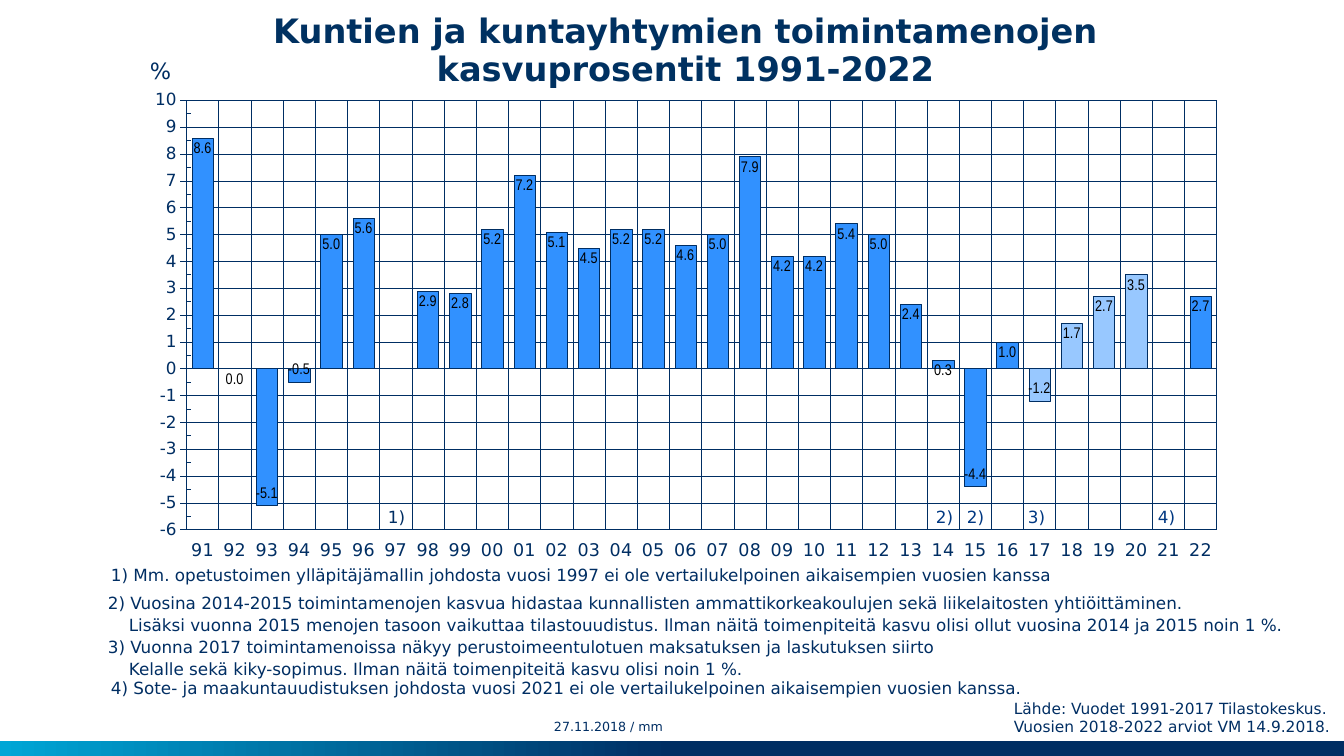
import pptx
import pptx.chart.data
import pptx.dml.color
import pptx.enum.chart
import pptx.enum.dml
import pptx.enum.shapes
import pptx.enum.text
import pptx.oxml
import pptx.oxml.ns
import pptx.util

RGB = pptx.dml.color.RGBColor
NAVY = RGB(0x00, 0x2E, 0x63)
TITLE_NAVY = RGB(0x00, 0x31, 0x61)
MARK_BLUE = RGB(0x00, 0x38, 0x82)
CYAN = RGB(0x00, 0xA6, 0xD6)
BAR_BLUE = RGB(0x31, 0x91, 0xFF)
ESTIMATE_BLUE = RGB(0x98, 0xC8, 0xFF)
BLACK = RGB(0, 0, 0)

FONT = "DejaVu Sans"
WIDTH, HEIGHT = 1344, 756
EMU_PER_PX = 914400 / 100.8
ANCHOR = pptx.enum.text.MSO_ANCHOR
TICK = pptx.enum.chart.XL_TICK_MARK

YEARS = [f"{year % 100:02d}" for year in range(1991, 2023)]
GROWTH = [8.6, 0, -5.1, -0.5, 5, 5.6, None, 2.9, 2.8, 5.2, 7.2, 5.1, 4.5, 5.2, 5.2, 4.6,
          5, 7.9, 4.2, 4.2, 5.4, 5, 2.4, 0.3, -4.4, 1, -1.2, 1.7, 2.7, 3.5, None, 2.7]
ESTIMATES = range(YEARS.index("17"), YEARS.index("21") + 1)

NOTES = [
    (101, 560, 977, 30, ANCHOR.TOP, 0, [
        "1) Mm. opetustoimen ylläpitäjämallin johdosta vuosi 1997 ei ole vertailukelpoinen "
        "aikaisempien vuosien kanssa"]),
    (93, 589, 1228, 51, ANCHOR.BOTTOM, 26, [
        "2) Vuosina 2014-2015 toimintamenojen kasvua hidastaa kunnallisten "
        "ammattikorkeakoulujen sekä liikelaitosten yhtiöittäminen.",
        "Lisäksi vuonna 2015 menojen tasoon vaikuttaa tilastouudistus. Ilman näitä "
        "toimenpiteitä kasvu olisi ollut vuosina 2014 ja 2015 noin 1 %."]),
    (93, 639, 1005, 45, ANCHOR.BOTTOM, 26, [
        "3) Vuonna 2017 toimintamenoissa näkyy perustoimeentulotuen maksatuksen ja "
        "laskutuksen siirto",
        "Kelalle sekä kiky-sopimus. Ilman näitä toimenpiteitä kasvu olisi noin 1 %."]),
    (101, 673, 977, 30, ANCHOR.TOP, 0, [
        "4) Sote- ja maakuntauudistuksen johdosta vuosi 2021 ei ole vertailukelpoinen "
        "aikaisempien vuosien kanssa."]),
]
MARKS = [("1)", 378, NAVY), ("2)", 926, MARK_BLUE), ("2)", 957, MARK_BLUE),
         ("3)", 1018, MARK_BLUE), ("4)", 1148, MARK_BLUE)]


def px(length):
    return pptx.util.Emu(round(length * EMU_PER_PX))


def style_font(font, size, color, name=FONT, bold=False):
    font.size = pptx.util.Pt(size)
    font.name = name
    font.bold = bold
    font.color.rgb = color


def style_line(line, dash=None):
    line.color.rgb = NAVY
    line.width = pptx.util.Pt(0.25)
    if dash:
        line.dash_style = dash


def add_text(slide, lines, left, top, width, height, size=12, color=NAVY, bold=False,
             align=None, anchor=ANCHOR.TOP, spacing=None, wrap=True, inset=True, hanging=0):
    """Add a text box; hanging is the indent in px of lines after the numbered first one."""
    box = slide.shapes.add_textbox(px(left), px(top), px(width), px(height))
    frame = box.text_frame
    frame.word_wrap = wrap
    frame.vertical_anchor = anchor
    if not inset:
        frame.margin_left = frame.margin_right = frame.margin_top = frame.margin_bottom = 0
    for index, line in enumerate(lines):
        para = frame.add_paragraph() if index else frame.paragraphs[0]
        if hanging:
            properties = para._p.get_or_add_pPr()
            properties.set("marL", str(px(hanging)))
            properties.set("indent", str(0 if index else px(5 - hanging)))
        para.alignment = align
        para.line_spacing = spacing
        span = para.add_run()
        span.text = line
        style_font(span.font, size, color, bold=bold)


def add_footer_band(slide):
    band = slide.shapes.add_shape(pptx.enum.shapes.MSO_SHAPE.RECTANGLE,
                                  0, px(741), px(WIDTH), px(15))
    band.shadow.inherit = False
    band.line.fill.background()
    band.fill.gradient()
    band.fill.gradient_angle = 180
    for stop, position, color in zip(band.fill.gradient_stops, (0.5, 1), (NAVY, CYAN)):
        stop.position = position
        stop.color.rgb = color


def frame_plot_area(chart):
    """Place the inner plot area and outline it."""
    namespaces = pptx.oxml.ns.nsdecls("c", "a")
    plot_area = chart._chartSpace.chart.plotArea
    for layout in plot_area.findall(pptx.oxml.ns.qn("c:layout")):
        plot_area.remove(layout)
    sizes = "".join(f'<c:{tag} val="{value}"/>' for tag, value in
                    (("x", 0.043), ("y", 0.021), ("w", 0.954), ("h", 0.88)))
    plot_area.insert(0, pptx.oxml.parse_xml(
        f'<c:layout {namespaces}><c:manualLayout><c:layoutTarget val="inner"/>'
        f'<c:xMode val="edge"/><c:yMode val="edge"/>{sizes}</c:manualLayout></c:layout>'))
    plot_area.append(pptx.oxml.parse_xml(
        f'<c:spPr {namespaces}><a:noFill/><a:ln w="12700"><a:solidFill>'
        f'<a:srgbClr val="{NAVY}"/></a:solidFill></a:ln></c:spPr>'))


def style_axis(axis, size):
    axis.major_tick_mark = TICK.OUTSIDE
    axis.tick_label_position = pptx.enum.chart.XL_TICK_LABEL_POSITION.LOW
    axis.has_major_gridlines = True
    style_line(axis.major_gridlines.format.line, pptx.enum.dml.MSO_LINE.ROUND_DOT)
    style_line(axis.format.line)
    style_font(axis.tick_labels.font, size, NAVY)


def add_growth_chart(slide):
    data = pptx.chart.data.CategoryChartData()
    data.categories = YEARS
    data.add_series("Kasvuprosentti", GROWTH)
    chart = slide.shapes.add_chart(pptx.enum.chart.XL_CHART_TYPE.COLUMN_STACKED,
                                   px(140), px(90), px(1080), px(488), data).chart
    chart.has_legend = False
    chart.has_title = False
    style_font(chart.font, 12, NAVY)
    frame_plot_area(chart)

    style_axis(chart.category_axis, 12.5)
    values = chart.value_axis
    style_axis(values, 12)
    values.minimum_scale, values.maximum_scale = -6, 10
    values.major_unit, values.minor_unit = 1, 0.5
    values.minor_tick_mark = TICK.INSIDE

    plot = chart.plots[0]
    plot.gap_width, plot.overlap = 50, 100
    plot.vary_by_categories = False
    bars = plot.series[0]
    bars.invert_if_negative = False
    bars.format.fill.solid()
    bars.format.fill.fore_color.rgb = BAR_BLUE
    style_line(bars.format.line)
    for index in ESTIMATES:
        point = bars.points[index].format
        point.fill.solid()
        point.fill.fore_color.rgb = ESTIMATE_BLUE
        style_line(point.line)

    labels = bars.data_labels
    labels.show_value = True
    labels.number_format = "0.0"
    labels.number_format_is_linked = False
    labels.position = pptx.enum.chart.XL_LABEL_POSITION.INSIDE_END
    style_font(labels.font, 11, BLACK, name="Arial Narrow")


def main():
    deck = pptx.Presentation()
    deck.slide_width, deck.slide_height = px(WIDTH), px(HEIGHT)
    slide = deck.slides.add_slide(deck.slide_layouts[6])

    add_footer_band(slide)
    add_text(slide, ["Kuntien ja kuntayhtymien toimintamenojen", "kasvuprosentit 1991-2022"],
             236, 13, 899, 78, size=24, color=TITLE_NAVY, bold=True, spacing=0.95,
             align=pptx.enum.text.PP_ALIGN.CENTER, inset=False)
    add_growth_chart(slide)
    add_text(slide, ["%"], 140, 52, 44, 37, size=16, wrap=False)
    for mark, left, color in MARKS:
        add_text(slide, [mark], left, 502, 39, 30, color=color, wrap=False)
    for left, top, width, height, anchor, hanging, lines in NOTES:
        add_text(slide, lines, left, top, width, height, anchor=anchor, hanging=hanging,
                 spacing=1.1 if hanging else None)
    add_text(slide, ["27.11.2018 / mm"], 554, 712, 126, 29, size=9,
             anchor=ANCHOR.MIDDLE, inset=False)
    add_text(slide, ["Lähde: Vuodet 1991-2017 Tilastokeskus.",
                     "Vuosien 2018-2022 arviot VM 14.9.2018."], 1004, 694, 343, 47, size=11)
    deck.save("out.pptx")


if __name__ == "__main__":
    main()
